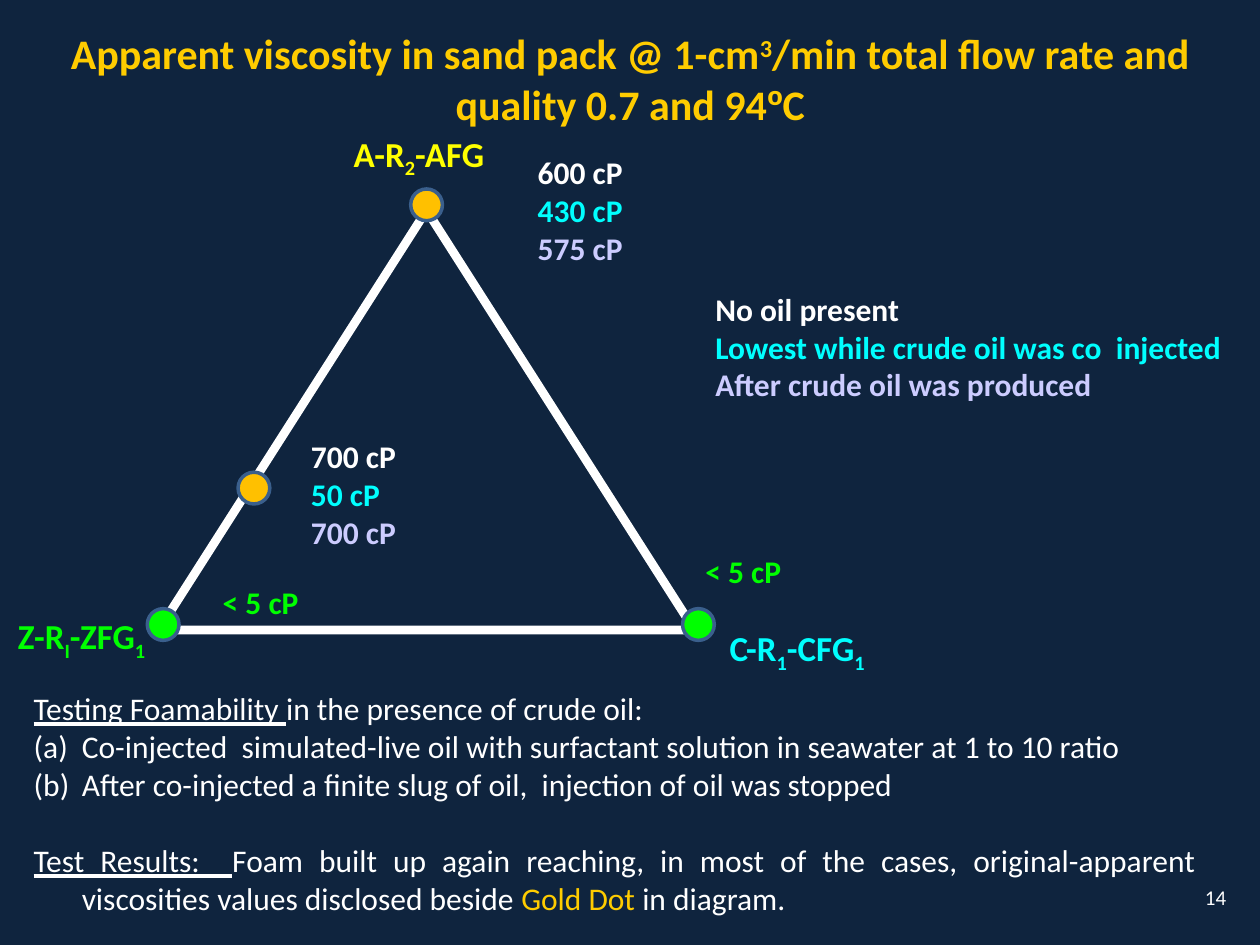
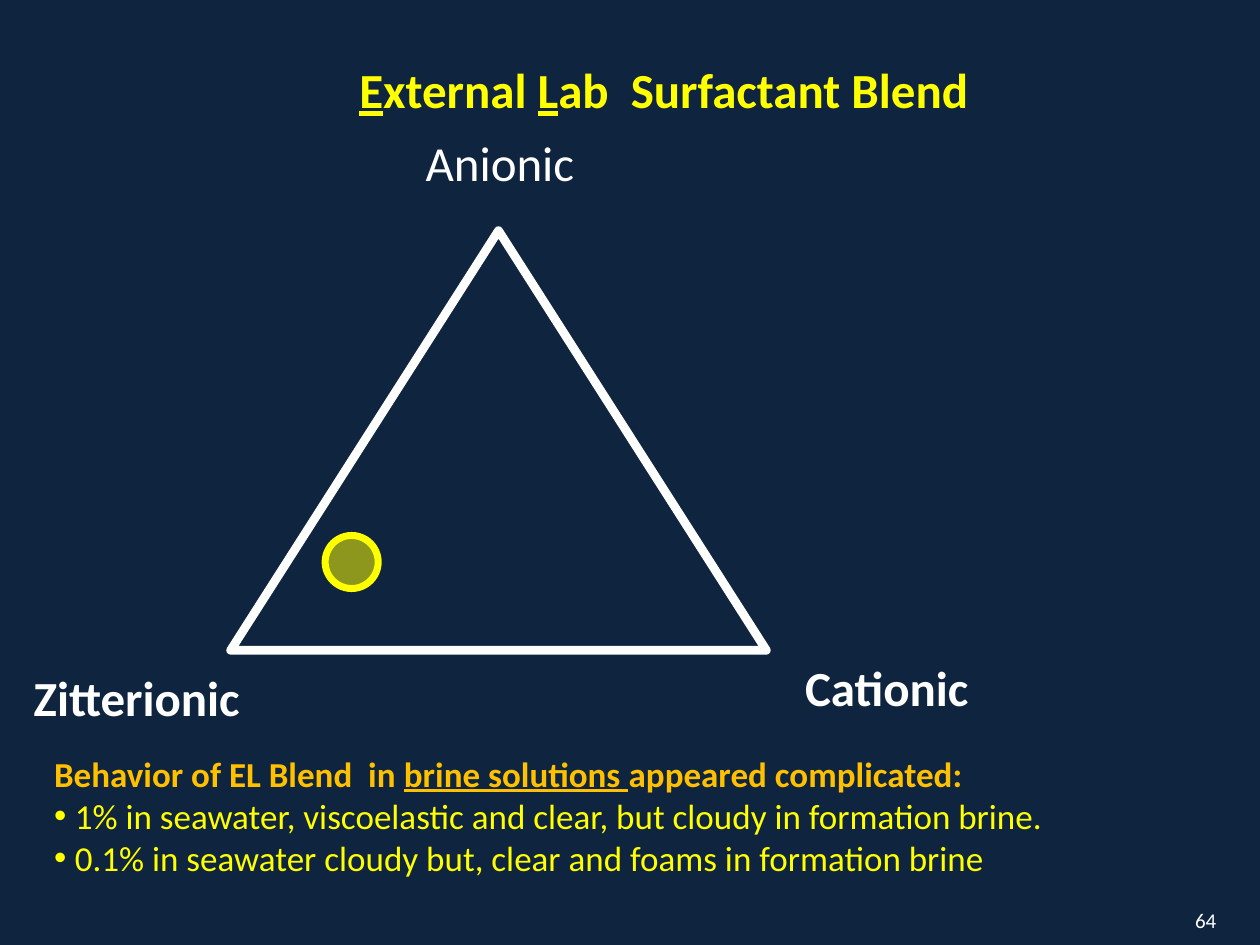
from lxml.etree import SubElement
from pptx import Presentation
from pptx.dml.color import RGBColor
from pptx.enum.shapes import MSO_SHAPE as SHAPE
from pptx.enum.text import MSO_ANCHOR as ANCHOR, MSO_AUTO_SIZE as AUTO, PP_ALIGN as AL
from pptx.oxml.ns import qn
from pptx.util import Cm, Pt

NAVY, WHITE, YELLOW, GOLD = "0F243E", "FFFFFF", "FFFF00", "FFCC00"
AMBER, GREEN, CYAN, LILAC, STEEL = "FFC000", "00FF00", "00FFFF", "CCCCFF", "3A5F8C"
FONT = "Calibri"
STATES = (WHITE, CYAN, LILAC)
BASELINE = {"^": "30000", "_": "-25000"}
TRIANGLE_SIZE = (10.8, 8.46)
DOT, BLEND_DOT = 0.64, 1.07

# Each run is (text, style, colour): u underline, n not bold, ^ superscript, _ subscript, A Arial.
VISCOSITY = {
    "title": [("Apparent viscosity in sand pack @ 1-cm",), ("3", "^"),
              ("/min total flow rate and quality 0.7 and 94",), ("º", "A"), ("C",)],
    "title_at": (0.64, 0.43, 24.13, 2.31),
    "triangle": (3.2, 4.24),
    "corners": [
        ([("A-R",), ("2", "_"), ("-AFG",)], (6.83, 2.54, 3.23, 1.12), YELLOW, AL.CENTER),
        ([("Z-R",), ("I", "_"), ("-ZFG",), ("1", "_")], (-0.05, 12.27, 3.23, 1.12), GREEN, AL.RIGHT),
        ([("C-R",), ("1", "_"), ("-CFG",), ("1", "_")], (14.33, 12.5, 3.48, 1.12), CYAN, AL.CENTER),
    ],
    "dots": [((8.6, 4.13), AMBER), ((5.12, 9.84), AMBER),
             ((3.29, 12.59), GREEN), ((14.08, 12.59), GREEN)],
    "readings": [(("700 cP", "50 cP", "700 cP"), (6.02, 8.69, 2.24, 2.57)),
                 (("600 cP", "430 cP", "575 cP"), (10.59, 2.97, 2.24, 2.57))],
    "legend": (("No oil present", "Lowest while crude oil was co  injected",
                "After crude oil was produced"), (14.17, 5.72, 11.23, 2.57)),
    "low": ("< 5 cP", [(13.97, 11, 2.06, 1.02), (4.24, 11.63, 2.06, 1.02)]),
    "notes": [
        [("Testing Foamability ", "u"), ("in the presence of crude oil:",)],
        [("Co-injected  simulated-live oil with surfactant solution in seawater at 1 to 10 ratio",)],
        [("After co-injected a finite slug of oil,  injection of oil was stopped",)],
        [("Test Results:  ", "u"),
         ("Foam built up again reaching, in most of the cases, original-apparent "
          "viscosities values disclosed beside ",),
         ("Gold Dot ", "", GOLD), ("in diagram.",)],
    ],
    "notes_at": (0.43, 13.77, 23.93, 4.88),
    "number": ("14", (19.05, 17.58, 5.92, 1.02)),
}
BLEND = {
    "title": [("E", "u"), ("xternal ",), ("L", "u"), ("ab  Surfactant Blend",)],
    "title_at": (6.99, 1.07, 12.95, 1.45),
    "triangle": (4.65, 4.65),
    "corners": [("Anionic", "n", (8.33, 2.54, 3.56, 1.45)),
                ("Zitterionic", "", (0.43, 13.34, 4.75, 1.45)),
                ("Cationic", "", (15.98, 13.13, 3.86, 1.45))],
    "dot": (7.09, 11.33),
    "notes": [
        [("Behavior of EL Blend  in ",), ("brine solutions ", "u"), ("appeared complicated:",)],
        [("1% in seawater, viscoelastic and clear, but cloudy in formation brine.", "n", YELLOW)],
        [("0.1% in seawater cloudy but, clear and foams in formation brine", "n", YELLOW)],
    ],
    "notes_at": (0.84, 15.04, 23.7, 2.82),
    "number": ("64", (18.85, 18.03, 5.92, 1.02)),
}


def rgb(color):
    return RGBColor.from_string(color)


def cms(values):
    return [Cm(v) for v in values]


def write(tf, paras, size, color, bold=True, align=AL.LEFT, wrap=False):
    """Fill a text frame with paragraphs of styled runs."""
    tf.word_wrap, tf.auto_size, tf.vertical_anchor = wrap, AUTO.NONE, ANCHOR.TOP
    for i, runs in enumerate(paras):
        p = tf.add_paragraph() if i else tf.paragraphs[0]
        p.alignment = align
        for text, style, tint in (tuple(run) + ("", None)[len(run) - 1:] for run in runs):
            r = p.add_run()
            r.text = text
            f = r.font
            f.name, f.size = "Arial" if "A" in style else FONT, Pt(size)
            f.bold, f.underline = bold and "n" not in style, "u" in style
            f.color.rgb = rgb(tint or color)
            for mark in set(style) & set(BASELINE):
                r._r.get_or_add_rPr().set("baseline", BASELINE[mark])
    return tf


def add_text(s, at, paras, size, color, **options):
    return write(s.shapes.add_textbox(*cms(at)).text_frame, paras, size, color, **options)


def add_states(s, lines, at, **options):
    """Write one line per oil state, each in the colour of that state."""
    add_text(s, at, [[(line, "", tint)] for line, tint in zip(lines, STATES)], 18, WHITE, **options)


def hang(p, indent, bullet=None, **attributes):
    """Give a paragraph a hanging indent and, if named, a bullet element."""
    pPr = p._p.get_or_add_pPr()
    pPr.set("marL", str(Cm(indent)))
    pPr.set("indent", str(-Cm(indent)))
    if bullet:
        SubElement(pPr, qn("a:buFont"), typeface="Arial")
        SubElement(pPr, qn(bullet), **attributes)


def add_outline(s, kind, at, line, width, fill=None):
    sp = s.shapes.add_shape(kind, *cms(at))
    sp.shadow.inherit = False
    sp.line.color.rgb, sp.line.width = rgb(line), Pt(width)
    if fill:
        sp.fill.solid()
        sp.fill.fore_color.rgb = rgb(fill)
    else:
        sp.fill.background()
    return sp


def add_dot(s, center, size, fill, line, width):
    x, y = center
    return add_outline(s, SHAPE.OVAL, (x - size / 2, y - size / 2, size, size), line, width, fill)


def start_slide(prs, content, size, color, **options):
    """Add a slide with its title, triangle and page number."""
    s = prs.slides.add_slide(prs.slide_layouts[5])
    title = s.shapes.title
    title.left, title.top, title.width, title.height = cms(content["title_at"])
    write(title.text_frame, [content["title"]], size, color, **options)
    add_outline(s, SHAPE.ISOSCELES_TRIANGLE, content["triangle"] + TRIANGLE_SIZE, WHITE, 5)
    number, at = content["number"]
    tf = add_text(s, at, [[(number,)]], 12, WHITE, bold=False, align=AL.RIGHT, wrap=True)
    tf.vertical_anchor = ANCHOR.MIDDLE
    return s


def add_notes(s, content, size, color, bold):
    return add_text(s, content["notes_at"], content["notes"], size, color,
                    bold=bold, align=AL.JUSTIFY, wrap=True).paragraphs


def build_viscosity(prs):
    c = VISCOSITY
    s = start_slide(prs, c, 24, GOLD, align=AL.CENTER, wrap=True)
    for runs, at, color, align in c["corners"]:
        add_text(s, at, [runs], 20, color, align=align)
    for center, fill in c["dots"]:
        add_dot(s, center, DOT, fill, STEEL, 2)
    for lines, at in c["readings"]:
        add_states(s, lines, at)
    add_states(s, *c["legend"], wrap=True)
    text, places = c["low"]
    for at in places:
        add_text(s, at, [[(text,)]], 18, GREEN)
    _, *steps, result = add_notes(s, c, 18, WHITE, False)
    for p in steps:
        hang(p, 0.97, "a:buAutoNum", type="alphaLcParenBoth")
    result.space_before = Pt(22)
    hang(result, 0.97)


def build_blend(prs):
    c = BLEND
    s = start_slide(prs, c, 28, YELLOW)
    for text, style, at in c["corners"]:
        add_text(s, at, [[(text, style)]], 28, WHITE)
    dot = add_dot(s, c["dot"], BLEND_DOT, YELLOW, YELLOW, 4)
    tint = dot.fill._xPr.find(qn("a:solidFill"))[0]
    SubElement(tint, qn("a:alpha"), val="53000")
    for p in add_notes(s, c, 20, AMBER, True)[1:]:
        hang(p, 0.42, "a:buChar", char="•")


def main():
    prs = Presentation()
    prs.slide_width, prs.slide_height = Cm(25.4), Cm(19.05)
    fill = prs.slide_master.background.fill
    fill.solid()
    fill.fore_color.rgb = rgb(NAVY)
    build_viscosity(prs)
    build_blend(prs)
    prs.save("out.pptx")


if __name__ == "__main__":
    main()
